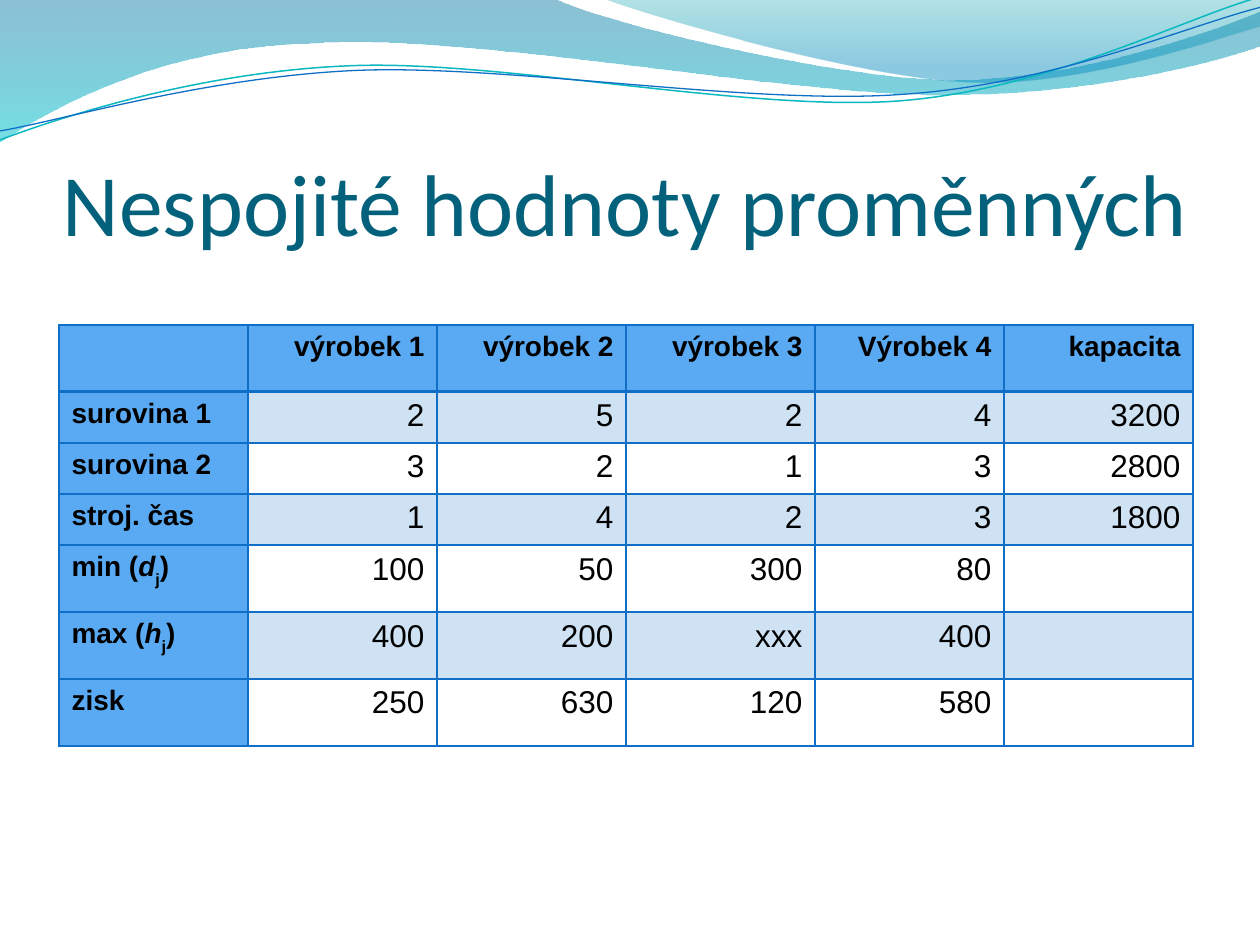
from dataclasses import dataclass

from lxml import etree
from pptx import Presentation
from pptx.dml.color import RGBColor
from pptx.enum.text import MSO_ANCHOR, PP_ALIGN
from pptx.oxml.ns import qn
from pptx.util import Cm, Pt

BOTTOM = MSO_ANCHOR.BOTTOM
RIGHT, JUSTIFY = PP_ALIGN.RIGHT, PP_ALIGN.JUSTIFY


@dataclass(frozen=True)
class Theme:
    title_font: str = "Calibri"
    table_font: str = "Arial"
    title_size: int = 50
    label_size: int = 16
    value_size: int = 18
    title: str = "04617B"
    text: str = "000000"
    blue: str = "0F6FC6"
    teal: str = "0AB8BF"
    header: str = "59AAF2"
    band_opacity: int = 20
    # Gradient stops: position, colour, opacity (percent)
    wave_gradient: tuple = ((0, "0074A1", 45), (100, "00C6CF", 55))
    crest_gradient: tuple = ((0, "00A1A9", 30), (80, "008BBF", 45))


THEME = Theme()

# Outlines in cm: a pair is a straight segment, six numbers are a Bézier curve
WAVE = [(0, 0), (11.18, -0.03), (12.09, 0.43, 16.87, 1.6, 19.25, 1.6),
        (21.67, 1.6, 24.33, 0.66, 25.4, 0.23), (25.43, 0.91),
        (24.97, 1.12, 22.1, 1.93, 18.95, 1.91),
        (15.8, 1.91, 9.7, 0.71, 6.53, 0.86),
        (3.28, 0.91, 1.17, 2.11, -0.03, 2.87)]
CREST = [(12.17, -0.03), (12.93, 0.28, 17.32, 1.57, 19.53, 1.65),
         (21.74, 1.75, 24.41, 0.81, 25.4, 0.53), (25.4, 0)]
# The two lines are given before they are turned
TEAL_LINE = [(-0.05, 2.22), (1.19, 1.82, 4.02, 1.04, 7.05, 1.06),
             (10.05, 1.07, 15.02, 2.37, 18.08, 2.29),
             (21.13, 2.2, 23.86, 0.91, 25.41, 0.55)]
BLUE_LINE = [(-0.04, 2.04), (1.16, 1.9, 4.17, 1.15, 7.2, 1.16),
             (10.25, 1.18, 15.13, 2.25, 18.19, 2.16),
             (21.22, 2.1, 23.93, 1.06, 25.45, 0.75)]
LINE_ROTATION = 357.3

HEADERS = ["", "výrobek 1", "výrobek 2", "výrobek 3", "Výrobek 4", "kapacita"]
# A label with a variable is a tuple: before, variable, subscript, after
ROWS = [
    ["surovina 1", "2", "5", "2", "4", "3200"],
    ["surovina 2", "3", "2", "1", "3", "2800"],
    ["stroj. čas", "1", "4", "2", "3", "1800"],
    [("min (", "d", "j", ")"), "100", "50", "300", "80", ""],
    [("max (", "h", "j", ")"), "400", "200", "xxx", "400", ""],
    ["zisk", "250", "630", "120", "580", ""],
]
COLUMN_WIDTH, LOW_ROW, TALL_ROW = Cm(3.81), Cm(1.03), Cm(1.35)


def rgb(color):
    return RGBColor.from_string(color)


def set_opacity(color_element, percent):
    etree.SubElement(color_element, qn("a:alpha"), val=str(percent * 1000))


def bend_segments(shape, segments):
    """Turn the straight segments that have control points into curves."""
    straight_lines = list(shape.element.iter(qn("a:lnTo")))
    for straight, segment in zip(straight_lines, segments):
        if len(segment) == 2:
            continue
        curve = etree.Element(qn("a:cubicBezTo"))
        for x, y in zip(segment[::2], segment[1::2]):
            etree.SubElement(curve, qn("a:pt"), x=str(Cm(x) - shape.left),
                             y=str(Cm(y) - shape.top))
        straight.getparent().replace(straight, curve)


def add_outline(slide, outline, close):
    vertices = [(Cm(segment[-2]), Cm(segment[-1])) for segment in outline]
    builder = slide.shapes.build_freeform(*vertices[0])
    builder.add_line_segments(vertices[1:], close=close)
    shape = builder.convert_to_shape()
    shape.shadow.inherit = False
    bend_segments(shape, outline[1:])
    return shape


def add_gradient_area(slide, outline, stops):
    shape = add_outline(slide, outline, close=True)
    shape.line.fill.background()
    shape.fill.gradient()
    shape.fill.gradient_angle = 270
    for stop, (position, color, _) in zip(shape.fill.gradient_stops, stops):
        stop.position = position / 100
        stop.color.rgb = rgb(color)
    for element, (_, _, opacity) in zip(list(shape.element.iter(qn("a:srgbClr"))), stops):
        set_opacity(element, opacity)


def add_curve(slide, outline, color, width):
    shape = add_outline(slide, outline, close=False)
    shape.rotation = LINE_ROTATION
    shape.fill.background()
    shape.line.color.rgb = rgb(color)
    shape.line.width = Pt(width)


def set_font(font, name, size, color, bold=False):
    font.name, font.size, font.bold = name, Pt(size), bold
    font.color.rgb = rgb(color)


def add_title(slide, text):
    frame = slide.shapes.add_textbox(Cm(1.27), Cm(1.95), Cm(22.86), Cm(3.17)).text_frame
    frame.word_wrap = True
    frame.vertical_anchor = BOTTOM
    frame.margin_left = frame.margin_right = frame.margin_bottom = 0
    paragraph = frame.paragraphs[0]
    paragraph.text = text
    set_font(paragraph.font, THEME.title_font, THEME.title_size, THEME.title)


def set_borders(cell, widths):
    properties = cell._tc.get_or_add_tcPr()
    for index, (side, width) in enumerate(zip("LRTB", widths)):
        line = etree.Element(qn(f"a:ln{side}"), w=str(Pt(width)))
        fill = etree.SubElement(line, qn("a:solidFill"))
        etree.SubElement(fill, qn("a:srgbClr"), val=THEME.blue)
        properties.insert(index, line)


def fill_cell(cell, row, column):
    if row == 0 or column == 0:
        cell.fill.solid()
        cell.fill.fore_color.rgb = rgb(THEME.header)
    elif row % 2:
        cell.fill.solid()
        cell.fill.fore_color.rgb = rgb(THEME.blue)
        set_opacity(next(cell._tc.iter(qn("a:srgbClr"))), THEME.band_opacity)
    else:
        cell.fill.background()


def write_cell(cell, content, row, column):
    paragraph = cell.text_frame.paragraphs[0]
    paragraph.alignment = RIGHT if column else JUSTIFY
    label = row == 0 or column == 0
    size = THEME.label_size if label else THEME.value_size
    set_font(paragraph.font, THEME.table_font, size, THEME.text, label)
    if isinstance(content, str):
        paragraph.text = content
        return
    runs = [paragraph.add_run() for _ in content]
    for run, text in zip(runs, content):
        run.text = text
    runs[1].font.italic = True
    runs[2]._r.get_or_add_rPr().set("baseline", "-30000")


def add_data_table(slide):
    grid = [HEADERS] + ROWS
    heights = [LOW_ROW if all(cells) else TALL_ROW for cells in grid]
    table = slide.shapes.add_table(
        len(grid), len(HEADERS), Cm(1.19), Cm(6.55),
        COLUMN_WIDTH * len(HEADERS), sum(heights)).table
    table.first_row = table.horz_banding = False
    for column in table.columns:
        column.width = COLUMN_WIDTH
    for row, cells in enumerate(grid):
        table.rows[row].height = heights[row]
        for column, content in enumerate(cells):
            cell = table.cell(row, column)
            fill_cell(cell, row, column)
            set_borders(cell, (1, 1, 2 if row == 1 else 1, 2 if row == 0 else 1))
            write_cell(cell, content, row, column)


def main():
    presentation = Presentation()
    presentation.slide_width, presentation.slide_height = Cm(25.4), Cm(19.05)
    slide = presentation.slides.add_slide(presentation.slide_layouts[6])

    # Wave decoration along the top
    add_gradient_area(slide, WAVE, THEME.wave_gradient)
    add_gradient_area(slide, CREST, THEME.crest_gradient)
    add_curve(slide, TEAL_LINE, THEME.teal, 0.85)
    add_curve(slide, BLUE_LINE, THEME.blue, 0.75)

    # Content
    add_title(slide, "Nespojité hodnoty proměnných")
    add_data_table(slide)
    presentation.save("out.pptx")


if __name__ == "__main__":
    main()
